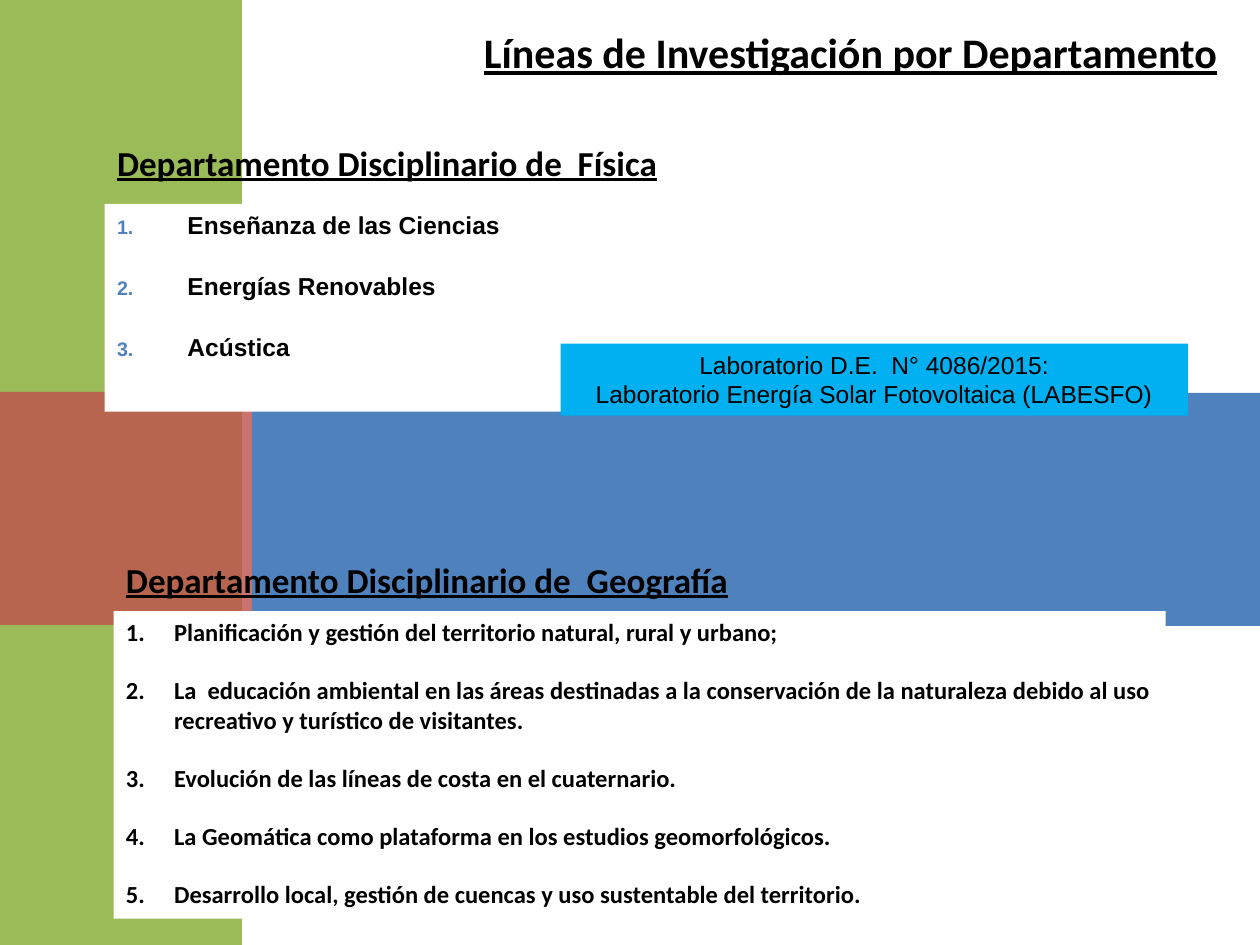
from lxml import etree
from pptx import Presentation
from pptx.dml.color import RGBColor
from pptx.enum.shapes import MSO_SHAPE
from pptx.enum.text import MSO_ANCHOR, PP_ALIGN
from pptx.oxml.ns import qn
from pptx.util import Cm, Pt

RECTANGLE = MSO_SHAPE.RECTANGLE
TOP = MSO_ANCHOR.TOP
LEFT, CENTER, RIGHT = PP_ALIGN.LEFT, PP_ALIGN.CENTER, PP_ALIGN.RIGHT

BLACK = RGBColor(0x00, 0x00, 0x00)
WHITE = RGBColor(0xFF, 0xFF, 0xFF)
GREEN = RGBColor(0x9B, 0xBB, 0x59)
RED = RGBColor(0xC0, 0x50, 0x4D)
BLUE = RGBColor(0x4F, 0x81, 0xBD)
CYAN = RGBColor(0x00, 0xB0, 0xF0)

PHYSICS_LINES = ["Enseñanza de las Ciencias", "Energías Renovables", "Acústica"]
LABORATORY = [
    "Laboratorio D.E.  N° 4086/2015:",
    "Laboratorio Energía Solar Fotovoltaica (LABESFO)",
]
GEOGRAPHY_LINES = [
    "Planificación y gestión del territorio natural, rural y urbano;",
    "La  educación ambiental en las áreas destinadas a la conservación de la "
    "naturaleza debido al uso recreativo y turístico de visitantes.",
    "Evolución de las líneas de costa en el cuaternario.",
    "La Geomática como plataforma en los estudios geomorfológicos.",
    "Desarrollo local, gestión de cuencas y uso sustentable del territorio.",
]


class SlideBuilder:
    """Draws styled panels, headings and numbered lists on one slide."""

    def __init__(self, slide, body_size=14):
        self.slide = slide
        self.body_size = body_size

    def panel(self, left, top, width, height, color, opacity=100):
        box = self.slide.shapes.add_shape(
            RECTANGLE, Cm(left), Cm(top), Cm(width), Cm(height))
        box.shadow.inherit = False
        box.fill.solid()
        box.fill.fore_color.rgb = color
        box.line.fill.background()
        if opacity < 100:
            tint = box.element.spPr.find(qn("a:solidFill"))[0]
            etree.SubElement(tint, qn("a:alpha"), val=str(opacity * 1000))
        frame = box.text_frame
        frame.word_wrap = True
        frame.vertical_anchor = TOP
        return frame

    def add_text(self, para, text, font, size, bold=True, underline=False):
        span = para.add_run()
        span.text = text
        span.font.name = font
        span.font.size = Pt(size)
        span.font.bold = bold
        span.font.underline = underline
        span.font.color.rgb = BLACK

    def heading(self, left, top, width, height, text, size, align=LEFT):
        box = self.slide.shapes.add_textbox(
            Cm(left), Cm(top), Cm(width), Cm(height))
        box.text_frame.word_wrap = True
        para = box.text_frame.paragraphs[0]
        para.alignment = align
        self.add_text(para, text, "Calibri", size, underline=True)

    def caption(self, frame, lines, font):
        for index, text in enumerate(lines):
            para = frame.add_paragraph() if index else frame.paragraphs[0]
            para.alignment = CENTER
            self.add_text(para, text, font, self.body_size, bold=False)

    def numbered(self, frame, items, font, indent, gap, color=BLACK, scale=100):
        for index, text in enumerate(items):
            para = frame.add_paragraph() if index else frame.paragraphs[0]
            para.alignment = LEFT
            props = para._p.get_or_add_pPr()
            props.set("marL", str(Cm(indent)))
            props.set("indent", str(-Cm(indent)))
            tint = etree.SubElement(props, qn("a:buClr"))
            etree.SubElement(tint, qn("a:srgbClr"), val=str(color))
            etree.SubElement(props, qn("a:buSzPct"), val=str(scale * 1000))
            etree.SubElement(props, qn("a:buAutoNum"), type="arabicPeriod")
            if index:
                para.space_before = Pt(gap)
            self.add_text(para, text, font, self.body_size)


def main():
    deck = Presentation()
    deck.slide_width, deck.slide_height = Cm(25.4), Cm(19.05)
    page = SlideBuilder(deck.slides.add_slide(deck.slide_layouts[6]))

    page.panel(0, 0, 4.88, 19.05, GREEN)
    page.panel(0, 7.9, 5.08, 4.7, RED, opacity=80)
    page.panel(5.08, 7.92, 20.32, 4.7, BLUE)

    physics = page.panel(2.11, 4.11, 20.62, 4.19, WHITE)
    page.numbered(physics, PHYSICS_LINES, "Arial", 1.42, 18, BLUE, 80)
    page.heading(2.11, 2.72, 16.08, 1.12,
                 "Departamento Disciplinario de  Física", 20)
    page.heading(5.94, 0.41, 18.85, 1.3,
                 "Líneas de Investigación por Departamento", 24, RIGHT)

    laboratory = page.panel(11.3, 6.93, 12.65, 1.45, CYAN)
    page.caption(laboratory, LABORATORY, "Arial")

    page.heading(2.29, 11.13, 16.08, 1.12,
                 "Departamento Disciplinario de  Geografía", 20)
    geography = page.panel(2.29, 12.32, 21.21, 6.2, WHITE)
    page.numbered(geography, GEOGRAPHY_LINES, "Calibri", 0.97, 16.4)

    deck.save("out.pptx")


if __name__ == "__main__":
    main()
